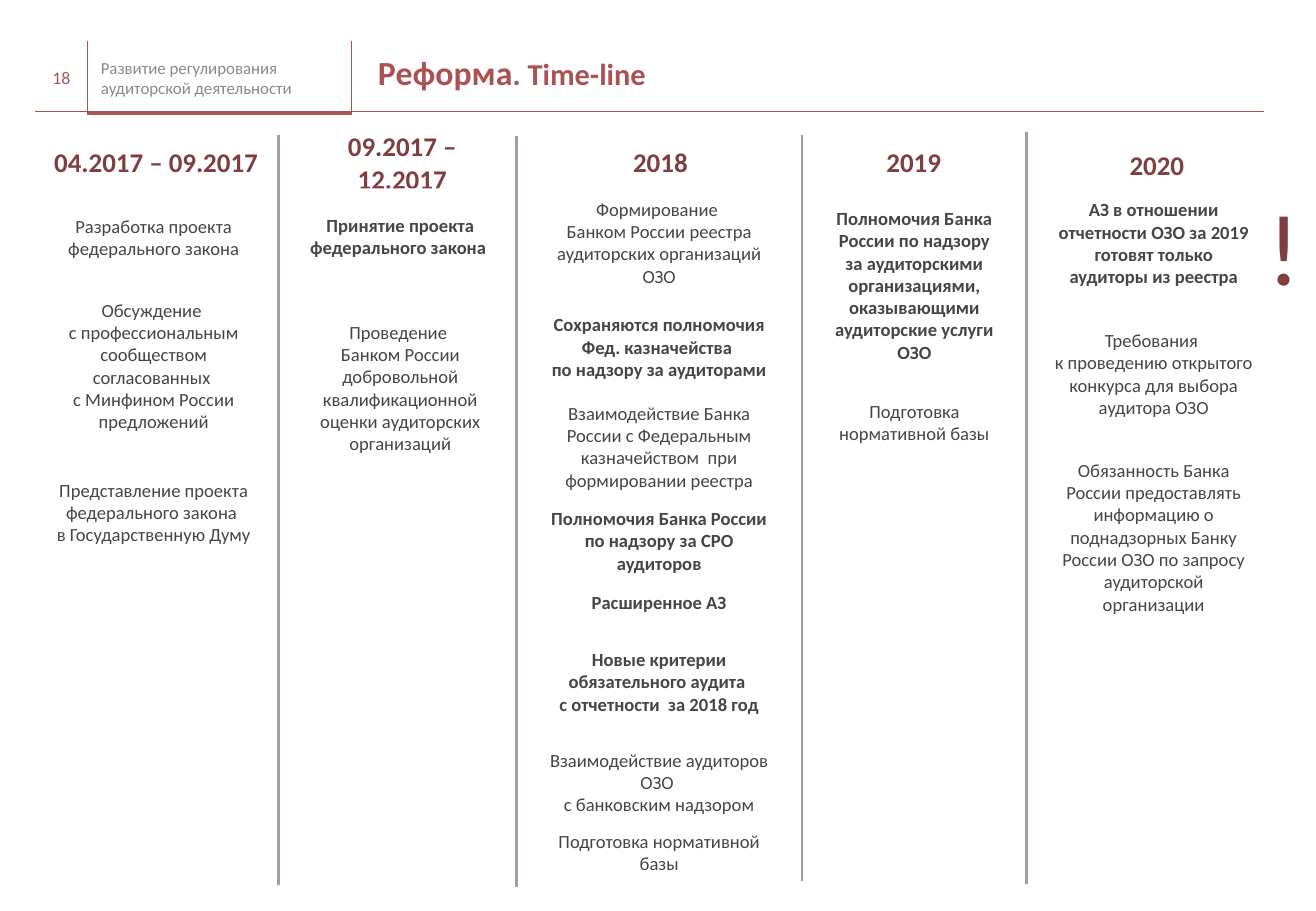
"""Build the slide with the audit reform time-line in five columns."""
import dataclasses

import pptx
import pptx.dml.color
import pptx.enum.shapes
import pptx.enum.text
import pptx.oxml
import pptx.oxml.ns
import pptx.util

Inches = pptx.util.Inches
ALIGN = pptx.enum.text.PP_ALIGN
ANCHOR = pptx.enum.text.MSO_ANCHOR
RED, DARK, TEXT = "AB5253", "803E3E", "454547"
GREY, RULE, WHITE = "8A8A8D", "A89B9D", "FFFFFF"


@dataclasses.dataclass
class Item:
    top: float
    height: float
    text: str
    bold: bool = False


@dataclasses.dataclass
class Column:
    left: float
    width: float
    head: Item
    inner: float
    span: float
    items: list[Item]


@dataclasses.dataclass
class Line:
    x1: float
    y1: float
    x2: float
    y2: float
    hue: str = RED
    width: float = 0.25


LINES = [
    Line(0.72, 0.92, 0.29, 0.92),
    Line(2.9, 0.93, 0.72, 0.93, width=2.25),
    Line(10.4, 0.92, 2.88, 0.92),
    *(Line(x, 0.93, x, 0.34) for x in (0.72, 2.89)),
    *(Line(x, top, x, end, RULE, 1.5) for x, top, end in (
        (2.29, 1.11, 7.29), (4.25, 1.12, 7.3), (6.6, 1.11, 7.25), (8.45, 1.09, 7.28))),
]

COLUMNS = [
    Column(0.32, 1.93, Item(1.16, 0.35, "04.2017 – 09.2017 "), 0.34, 1.85, [
        Item(1.55, 0.8, "Разработка проекта федерального закона"),
        Item(2.4, 1.22, "Обсуждение \nс профессиональным сообществом согласованных \n"
             "с Минфином России предложений"),
        Item(3.68, 1.07, "Представление проекта федерального закона \n"
             "в Государственную Думу"),
    ]),
    Column(2.37, 1.88, Item(1.16, 0.35, "09.2017 – 12.2017"), 2.41, 1.77, [
        Item(1.55, 0.79, "Принятие проекта федерального закона ", True),
        Item(2.38, 1.62, "Проведение \nБанком России добровольной квалификационной "
             "оценки аудиторских организаций"),
    ]),
    Column(4.33, 2.21, Item(1.16, 0.35, "2018"), 4.4, 2.05, [
        Item(1.56, 0.87, "Формирование \nБанком России реестра аудиторских "
             "организаций ОЗО"),
        Item(2.46, 0.79, "Сохраняются полномочия Фед. казначейства \n"
             "по надзору за аудиторами", True),
        Item(3.28, 0.79, "Взаимодействие Банка России с Федеральным "
             "казначейством  при формировании реестра"),
        Item(4.11, 0.68, "Полномочия Банка России по надзору за СРО аудиторов", True),
        Item(4.83, 0.26, "Расширенное АЗ", True),
        Item(5.14, 0.94, "Новые критерии обязательного аудита \n"
             "с отчетности  за 2018 год", True),
        Item(6.12, 0.64, "Взаимодействие аудиторов ОЗО \nс банковским надзором"),
        Item(6.82, 0.39, "Подготовка нормативной базы"),
    ]),
    Column(6.64, 1.76, Item(1.16, 0.35, "2019"), 6.72, 1.61, [
        Item(1.57, 1.55, "Полномочия Банка России по надзору за аудиторскими "
             "организациями, оказывающими аудиторские услуги ОЗО", True),
        Item(3.18, 0.59, "Подготовка нормативной базы"),
    ]),
    Column(8.55, 1.94, Item(1.16, 0.39, "2020"), 8.56, 1.87, [
        Item(1.57, 0.86, "АЗ в отношении отчетности ОЗО за 2019 готовят только "
             "аудиторы из реестра", True),
        Item(2.53, 1.09, "Требования \nк проведению открытого конкурса для выбора "
             "аудитора ОЗО"),
        Item(3.72, 1.4, "Обязанность Банка России предоставлять информацию "
             "о поднадзорных Банку России ОЗО по запросу аудиторской организации"),
    ]),
]


def paint(color, hue: str) -> None:
    color.rgb = pptx.dml.color.RGBColor.from_string(hue)


def write(para, text: str, *, size: float, hue: str, bold: bool = False,
          align=ALIGN.LEFT, gap: float = 1) -> None:
    para.alignment = align
    para.line_spacing = gap
    run = para.add_run()
    run.text = text
    font = run.font
    font.name, font.size, font.bold = "Calibri", pptx.util.Pt(size), bold
    paint(font.color, hue)


def frame(shape, side: float = 0, edge: float = 0, anchor=ANCHOR.MIDDLE):
    body = shape.text_frame
    body.word_wrap = True
    body.auto_size = pptx.enum.text.MSO_AUTO_SIZE.NONE
    body.vertical_anchor = anchor
    body.margin_left = body.margin_right = Inches(side)
    body.margin_top = body.margin_bottom = Inches(edge)
    return body


def add_card(slide, left: float, width: float, item: Item, *,
             size: float, hue: str, bold: bool) -> None:
    card = slide.shapes.add_shape(
        pptx.enum.shapes.MSO_SHAPE.RECTANGLE, Inches(left), Inches(item.top),
        Inches(width), Inches(item.height))
    card.shadow.inherit = False
    card.fill.solid()
    paint(card.fill.fore_color, WHITE)
    card.line.fill.background()
    body = frame(card, 0.12, 0.06)
    for row, text in enumerate(item.text.split("\n")):
        para = body.add_paragraph() if row else body.paragraphs[0]
        write(para, text, size=size, hue=hue, bold=bold, align=ALIGN.CENTER)


def add_line(slide, line: Line) -> None:
    link = slide.shapes.add_connector(
        pptx.enum.shapes.MSO_CONNECTOR.STRAIGHT, Inches(line.x1), Inches(line.y1),
        Inches(line.x2), Inches(line.y2))
    link.line.width = pptx.util.Pt(line.width)
    paint(link.line.color, line.hue)
    props = link._element.spPr
    props.append(props.makeelement(pptx.oxml.ns.qn("a:effectLst"), {}))


def add_note(slide, left: float, top: float, width: float, height: float,
             text: str, *, anchor=ANCHOR.MIDDLE, **style) -> None:
    note = slide.shapes.add_textbox(
        Inches(left), Inches(top), Inches(width), Inches(height))
    write(frame(note, anchor=anchor).paragraphs[0], text, **style)


def add_title(slide) -> None:
    title = slide.shapes.title
    title.left, title.top = Inches(3.01), Inches(0.3)
    title.width, title.height = Inches(5.52), Inches(0.62)
    para = frame(title, 0.1, 0.05).paragraphs[0]
    for text, size in (("Реформа", 20), (". Time-line", 18)):
        write(para, text, size=size, hue=RED, bold=True, gap=0.9)


def main() -> None:
    deck = pptx.Presentation()
    deck.slide_width, deck.slide_height = Inches(10.83), Inches(7.5)
    slide = deck.slides.add_slide(deck.slide_layouts.get_by_name("Title Only"))
    add_title(slide)
    add_note(slide, 0.29, 0.44, 0.43, 0.4, "18", size=10.5, hue=RED,
             align=ALIGN.CENTER)
    add_note(slide, 0.83, 0.47, 2.03, 0.34,
             "Развитие регулирования аудиторской деятельности", size=10, hue=GREY)
    for col in COLUMNS:
        add_card(slide, col.left, col.width, col.head, size=16, hue=DARK, bold=True)
        for item in col.items:
            add_card(slide, col.inner, col.span, item, size=11, hue=TEXT,
                     bold=item.bold)
    for line in LINES:
        add_line(slide, line)
    add_note(slide, 10.43, 1.63, 0.28, 0.83, "!", anchor=ANCHOR.TOP, size=60,
             hue=DARK, gap=0.9)
    deck.save("out.pptx")


if __name__ == "__main__":
    main()
